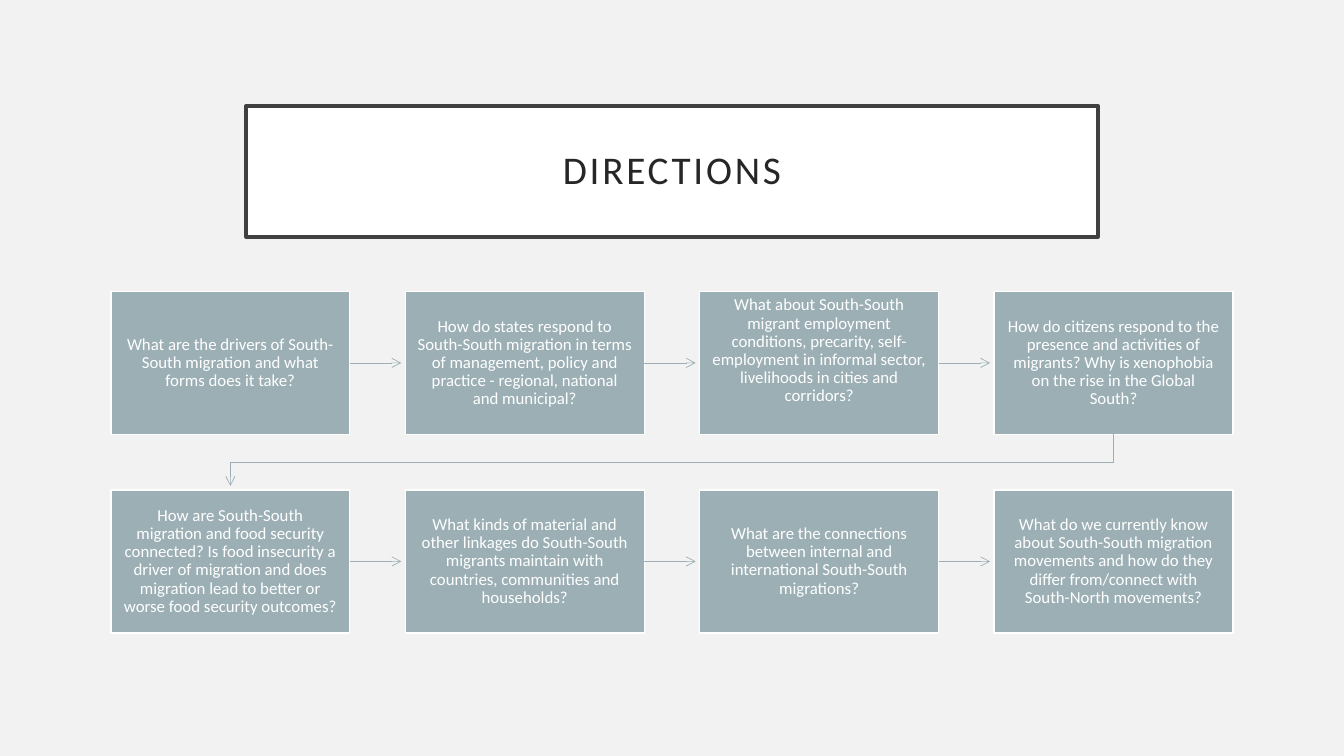
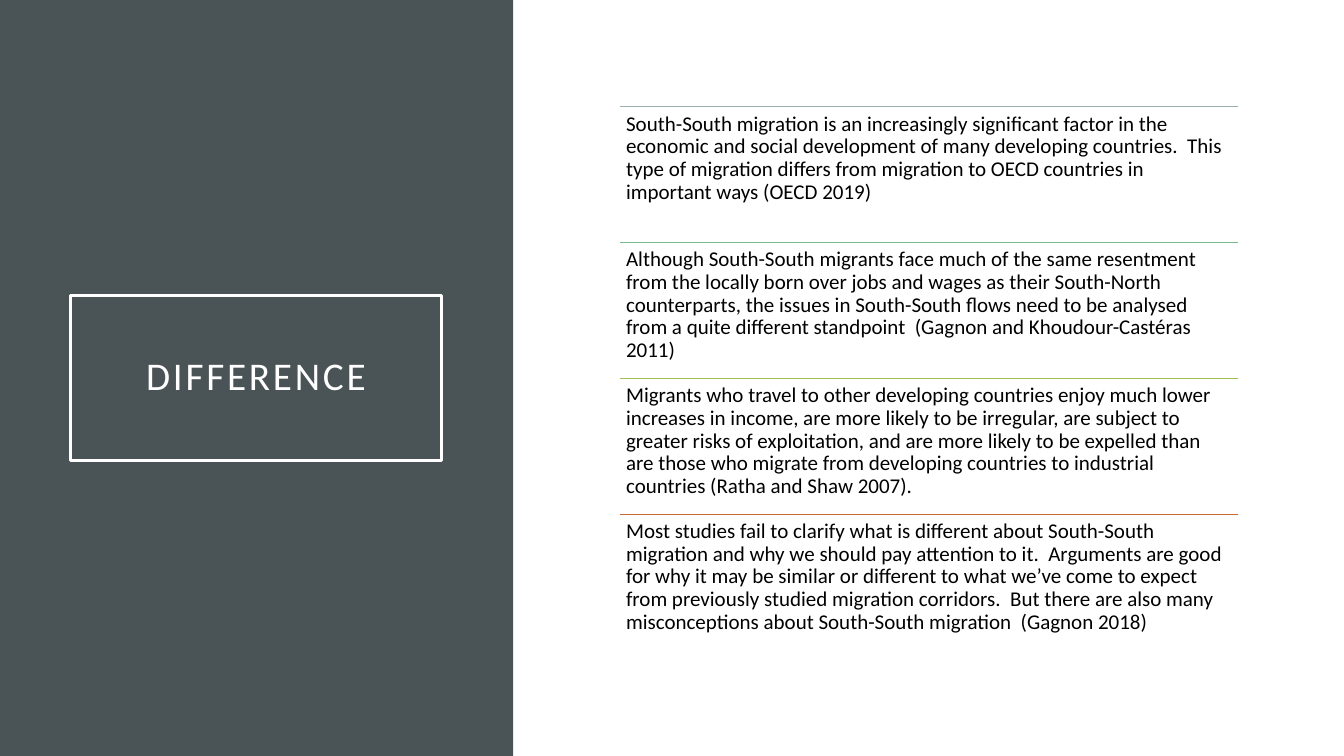
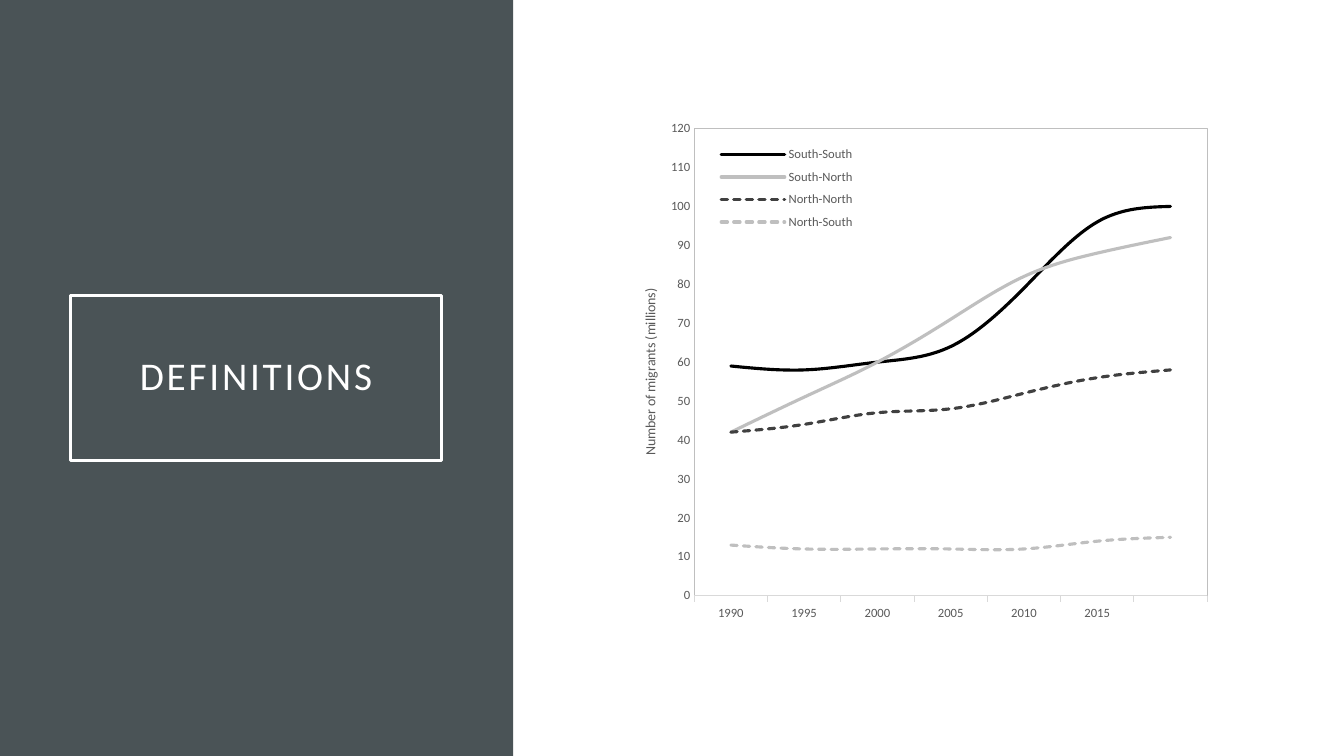
from dataclasses import dataclass

from lxml.etree import SubElement
from pptx import Presentation
from pptx.chart.data import CategoryChartData
from pptx.dml.color import RGBColor
from pptx.enum.chart import XL_CHART_TYPE, XL_LEGEND_POSITION, XL_TICK_MARK
from pptx.enum.dml import MSO_LINE
from pptx.enum.shapes import MSO_CONNECTOR, MSO_SHAPE
from pptx.enum.text import MSO_ANCHOR, PP_ALIGN
from pptx.oxml import parse_xml
from pptx.oxml.ns import nsdecls, qn
from pptx.util import Inches, Pt

FONT = "Calibri"
COLORS = {
    "paper": "F2F2F2", "white": "FFFFFF", "black": "000000", "slate": "4A5356",
    "frame": "404040", "title": "262626", "steel": "9BAFB5", "green": "7BB88C",
    "lime": "9FC057", "rust": "C96731", "silver": "BFBFBF", "axis": "D9D9D9",
    "label": "595959",
}
SLIDE_WIDTH, SLIDE_HEIGHT = 13.33, 7.5
CONTENT_LEFT, CONTENT_TOP, CONTENT_WIDTH, CONTENT_HEIGHT = 6.15, 1.06, 6.13, 5.39
ARROW_GAP = 0.04


@dataclass(frozen=True)
class Box:
    left: float
    top: float
    width: float
    height: float

    def emu(self) -> tuple:
        return tuple(Inches(v) for v in (self.left, self.top, self.width, self.height))


@dataclass(frozen=True)
class Grid:
    origin: Box
    column_step: float
    row_step: float
    columns: int

    def cell(self, index: int) -> Box:
        row, column = divmod(index, self.columns)
        first = self.origin
        return Box(first.left + column * self.column_step,
                   first.top + row * self.row_step, first.width, first.height)


@dataclass(frozen=True)
class Question:
    text: str
    lift: float = 0  # inches the text sits above the middle


@dataclass(frozen=True)
class Statement:
    color: str
    text: str


@dataclass(frozen=True)
class Flow:
    name: str
    values: tuple
    color: str
    dashed: bool = False


QUESTION_GRID = Grid(Box(1.1, 2.89, 2.37, 1.42), 2.92, 1.97, 4)
PANEL = Box(0, 0, 5.09, SLIDE_HEIGHT)
WIDE_TITLE = Box(2.44, 1.05, 8.45, 1.3)
SIDE_TITLE = Box(0.7, 2.93, 3.68, 1.64)

QUESTIONS = (
    Question("What are the drivers of South-South migration and what forms does it take?"),
    Question("How do states respond to South-South migration in terms of management, policy "
             "and practice - regional, national and municipal?"),
    Question("What about South-South migrant employment conditions, precarity, "
             "self-employment in informal sector, livelihoods in cities and corridors?",
             lift=0.12),
    Question("How do citizens respond to the presence and activities of migrants? Why is "
             "xenophobia on the rise in the Global South?"),
    Question("How are South-South migration and food security connected? Is food insecurity "
             "a driver of migration and does migration lead to better or worse food "
             "security outcomes?"),
    Question("What kinds of material and other linkages do South-South migrants maintain "
             "with countries, communities and households?"),
    Question("What are the connections between internal and international South-South "
             "migrations?"),
    Question("What do we currently know about South-South migration movements and how do "
             "they differ from/connect with South-North movements?"),
)
STATEMENTS = (
    Statement("steel", "South-South migration is an increasingly significant factor in the "
              "economic and social development of many developing countries.  This type of "
              "migration differs from migration to OECD countries in important ways "
              "(OECD 2019)"),
    Statement("green", "Although South-South migrants face much of the same resentment from "
              "the locally born over jobs and wages as their South-North counterparts, the "
              "issues in South-South flows need to be analysed from a quite different "
              "standpoint  (Gagnon and Khoudour-Castéras 2011)"),
    Statement("lime", "Migrants who travel to other developing countries enjoy much lower "
              "increases in income, are more likely to be irregular, are subject to greater "
              "risks of exploitation, and are more likely to be expelled than are those who "
              "migrate from developing countries to industrial countries (Ratha and Shaw "
              "2007)."),
    Statement("rust", "Most studies fail to clarify what is different about South-South "
              "migration and why we should pay attention to it.  Arguments are good for why "
              "it may be similar or different to what we’ve come to expect from previously "
              "studied migration corridors.  But there are also many misconceptions about "
              "South-South migration  (Gagnon 2018)"),
)
YEARS = ("1990", "1995", "2000", "2005", "2010", "2015", "")
FLOWS = (
    Flow("South-South", (59, 58, 60, 64, 79, 96, 100), "black"),
    Flow("South-North", (42, 51, 60, 71, 82, 88, 92), "silver"),
    Flow("North-North", (42, 44, 47, 48, 52, 56, 58), "frame", dashed=True),
    Flow("North-South", (13, 12, 12, 12, 12, 14, 15), "silver", dashed=True),
)


def rgb(name: str) -> RGBColor:
    return RGBColor.from_string(COLORS[name])


def style_font(font, size: float, color: str) -> None:
    font.name, font.size, font.bold = FONT, Pt(size), False
    font.color.rgb = rgb(color)


def style_line(line, color: str, width: float) -> None:
    line.color.rgb = rgb(color)
    line.width = Pt(width)


def add_arrowhead(shape) -> None:
    outline = shape.element.spPr.find(qn("a:ln"))
    SubElement(outline, qn("a:tailEnd"), type="arrow")


def write_text(shape, text: str, size: float, color: str, insets: tuple,
               align=PP_ALIGN.CENTER, anchor=MSO_ANCHOR.MIDDLE):
    """Fill a shape with one paragraph; insets run left, top, right, bottom."""
    frame = shape.text_frame
    frame.text = text
    frame.word_wrap = True
    frame.vertical_anchor = anchor
    (frame.margin_left, frame.margin_top,
     frame.margin_right, frame.margin_bottom) = (Inches(inset) for inset in insets)
    paragraph = frame.paragraphs[0]
    paragraph.alignment = align
    paragraph.line_spacing = 0.9
    run = paragraph.runs[0]
    style_font(run.font, size, color)
    return run


def add_rectangle(slide, box: Box, fill: str = "", line: str = "", width: float = 1):
    shape = slide.shapes.add_shape(MSO_SHAPE.RECTANGLE, *box.emu())
    shape.shadow.inherit = False
    if fill:
        shape.fill.solid()
        shape.fill.fore_color.rgb = rgb(fill)
    else:
        shape.fill.background()
    if line:
        style_line(shape.line, line, width)
    else:
        shape.line.fill.background()
    return shape


def add_straight_line(slide, start: tuple, end: tuple, color: str):
    points = (Inches(value) for value in (*start, *end))
    connector = slide.shapes.add_connector(MSO_CONNECTOR.STRAIGHT, *points)
    style_line(connector.line, color, 0.5)
    SubElement(connector.element.spPr, qn("a:effectLst"))
    return connector


def add_title(slide, text: str, box: Box, fill: str, line: str, color: str) -> None:
    shape = add_rectangle(slide, box, fill, line, 2.5)
    run = write_text(shape, text, 28, color, (0.2,) * 4)
    run.font._element.set("spc", "200")


def add_slide(presentation, background: str):
    slide = presentation.slides.add_slide(presentation.slide_layouts[6])
    slide.background.fill.solid()
    slide.background.fill.fore_color.rgb = rgb(background)
    return slide


def add_panel_slide(presentation, title: str):
    """Add a white slide with the dark panel and framed title on the left."""
    slide = add_slide(presentation, "white")
    add_rectangle(slide, PANEL, "slate")
    add_title(slide, title, SIDE_TITLE, "", "white", "white")
    return slide


def add_row_turn(slide, last: Box, first: Box) -> None:
    """Lead from the end of one row down to the start of the next."""
    start_x, end_x = (Inches(box.left + box.width / 2) for box in (last, first))
    bottom = last.top + last.height
    middle = Inches((bottom + first.top) / 2)
    builder = slide.shapes.build_freeform(start_x, Inches(bottom))
    builder.add_line_segments(
        [(start_x, middle), (end_x, middle), (end_x, Inches(first.top - ARROW_GAP))],
        close=False)
    turn = builder.convert_to_shape()
    turn.shadow.inherit = False
    turn.fill.background()
    style_line(turn.line, "steel", 0.5)
    add_arrowhead(turn)


def build_directions(presentation) -> None:
    slide = add_slide(presentation, "paper")
    add_title(slide, "DIRECTIONS", WIDE_TITLE, "white", "frame", "title")
    for index, question in enumerate(QUESTIONS):
        box = QUESTION_GRID.cell(index)
        shape = add_rectangle(slide, box, "steel", "white")
        insets = (0.12, 0.12 - question.lift, 0.12, 0.12 + question.lift)
        write_text(shape, question.text, 12, "white", insets)
        if index + 1 == len(QUESTIONS):
            break
        following = QUESTION_GRID.cell(index + 1)
        if following.top > box.top:
            add_row_turn(slide, box, following)
            continue
        middle = box.top + box.height / 2
        arrow = add_straight_line(slide, (box.left + box.width, middle),
                                  (following.left - ARROW_GAP, middle), "steel")
        arrow.begin_connect(shape, 3)
        add_arrowhead(arrow)


def build_difference(presentation) -> None:
    slide = add_panel_slide(presentation, "DIFFERENCE")
    height = CONTENT_HEIGHT / len(STATEMENTS)
    grid = Grid(Box(CONTENT_LEFT, CONTENT_TOP, CONTENT_WIDTH, height), 0, height, 1)
    for index, statement in enumerate(STATEMENTS):
        box = grid.cell(index)
        add_straight_line(slide, (box.left, box.top), (box.left + box.width, box.top),
                          statement.color)
        text_box = slide.shapes.add_textbox(*box.emu())
        write_text(text_box, statement.text, 15, "black", (0.06,) * 4,
                   PP_ALIGN.LEFT, MSO_ANCHOR.TOP)


def set_layout(element, index: int, inner: bool = False, **shares: float) -> None:
    """Place a chart part by shares (x, y, w, h) of the chart's size."""
    for old in element.findall(qn("c:layout")):
        element.remove(old)
    target = '<c:layoutTarget val="inner"/>' if inner else ""
    modes = "".join(f'<c:{key}Mode val="edge"/>' for key in shares if key in "xy")
    sizes = "".join(f'<c:{key} val="{share}"/>' for key, share in shares.items())
    element.insert(index, parse_xml(
        f'<c:layout {nsdecls("c")}><c:manualLayout>{target}{modes}{sizes}'
        '</c:manualLayout></c:layout>'))


def style_axes(chart) -> None:
    years, migrants = chart.category_axis, chart.value_axis
    for axis in (years, migrants):
        axis.has_major_gridlines = False
        axis.minor_tick_mark = XL_TICK_MARK.NONE
        style_font(axis.tick_labels.font, 9, "label")
    years.major_tick_mark = XL_TICK_MARK.OUTSIDE
    style_line(years.format.line, "axis", 0.75)
    migrants.major_tick_mark = XL_TICK_MARK.NONE
    migrants.format.line.fill.background()
    migrants.minimum_scale, migrants.maximum_scale, migrants.major_unit = 0, 120, 10
    migrants.tick_labels.number_format = "0"
    migrants.tick_labels.number_format_is_linked = False
    title = migrants.axis_title
    title.text_frame.text = "Number of migrants (millions)"
    style_font(title.text_frame.paragraphs[0].runs[0].font, 10, "label")
    set_layout(title._element, 1, x=0.03, y=0.33)
    for crossing in migrants._element.findall(qn("c:crossBetween")):
        crossing.set("val", "midCat")


def build_definitions(presentation) -> None:
    slide = add_panel_slide(presentation, "DEFINITIONS")
    data = CategoryChartData(number_format="0")
    data.categories = YEARS
    for flow in FLOWS:
        data.add_series(flow.name, flow.values)
    box = Box(CONTENT_LEFT, CONTENT_TOP, CONTENT_WIDTH, CONTENT_HEIGHT)
    chart = slide.shapes.add_chart(XL_CHART_TYPE.LINE, *box.emu(), data).chart
    chart.has_title = False
    style_font(chart.font, 10, "black")
    style_axes(chart)
    plot = chart.plots[0]
    plot.vary_by_categories = False
    for series, flow in zip(plot.series, FLOWS):
        series.smooth = True
        style_line(series.format.line, flow.color, 2.25)
        if flow.dashed:
            series.format.line.dash_style = MSO_LINE.SQUARE_DOT
        series._element.find(qn("c:spPr")).find(qn("a:ln")).set("cap", "rnd")
    chart.has_legend = True
    chart.legend.position = XL_LEGEND_POSITION.BOTTOM
    chart.legend.include_in_layout = True
    style_font(chart.legend.font, 9, "label")
    set_layout(chart.legend._element, 1, x=0.15, y=0.06, w=0.24, h=0.18)
    plot_area = chart._chartSpace.chart.plotArea
    set_layout(plot_area, 0, inner=True, x=0.12, y=0.04, w=0.83, h=0.86)
    plot_area.append(parse_xml(
        f'<c:spPr {nsdecls("c", "a")}><a:noFill/><a:ln w="9525"><a:solidFill>'
        f'<a:srgbClr val="{COLORS["silver"]}"/></a:solidFill></a:ln></c:spPr>'))


def main() -> None:
    presentation = Presentation()
    presentation.slide_width = Inches(SLIDE_WIDTH)
    presentation.slide_height = Inches(SLIDE_HEIGHT)
    build_directions(presentation)
    build_difference(presentation)
    build_definitions(presentation)
    presentation.save("out.pptx")


if __name__ == "__main__":
    main()
